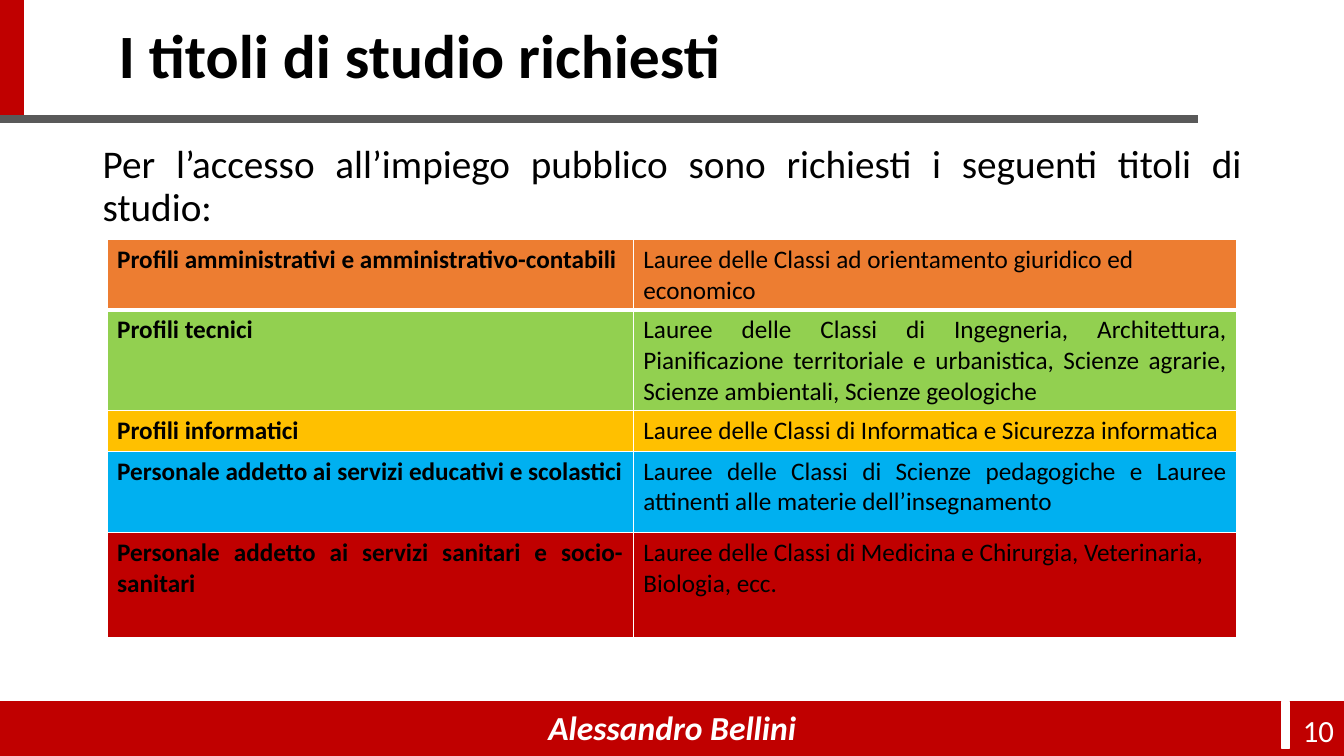
from lxml import etree
from pptx import Presentation
from pptx.dml.color import RGBColor
from pptx.enum.shapes import MSO_CONNECTOR, MSO_SHAPE
from pptx.enum.text import MSO_ANCHOR, PP_ALIGN
from pptx.oxml.ns import qn
from pptx.util import Cm, Pt

LEFT, CENTER, RIGHT = PP_ALIGN.LEFT, PP_ALIGN.CENTER, PP_ALIGN.RIGHT
JUSTIFY = PP_ALIGN.JUSTIFY
TOP, MIDDLE = MSO_ANCHOR.TOP, MSO_ANCHOR.MIDDLE
RECT, STRAIGHT = MSO_SHAPE.RECTANGLE, MSO_CONNECTOR.STRAIGHT

RED, GREY, WHITE, BLACK = "C00000", "595959", "FFFFFF", "000000"
WIDTH, HEIGHT = 33.87, 19.05


def color(value):
    return RGBColor.from_string(value)


class SlideBuilder:
    font = "Calibri"

    def __init__(self, slide):
        self.s = slide

    def rect(self, x, y, w, h, fill):
        sp = self.s.shapes.add_shape(RECT, Cm(x), Cm(y), Cm(w), Cm(h))
        sp.shadow.inherit = False
        sp.fill.solid()
        sp.fill.fore_color.rgb = color(fill)
        sp.line.color.rgb = color(fill)
        sp.line.width = Pt(1)

    def line(self, x1, y1, x2, y2, stroke, width):
        c = self.s.shapes.add_connector(STRAIGHT, Cm(x1), Cm(y1), Cm(x2), Cm(y2))
        c.line.color.rgb = color(stroke)
        c.line.width = Pt(width)
        etree.SubElement(c._element.spPr, qn("a:effectLst"))

    def set_text(self, tf, text, size, fill=BLACK, align=LEFT, bold=False,
                 italic=False, spacing=None):
        tf.text = text
        p = tf.paragraphs[0]
        p.alignment = align
        if spacing:
            p.line_spacing = spacing
        f = p.runs[0].font
        f.name, f.size, f.bold, f.italic = self.font, Pt(size), bold, italic
        f.color.rgb = color(fill)

    def text(self, x, y, w, h, text, size, anchor=MIDDLE, **style):
        tf = self.s.shapes.add_textbox(Cm(x), Cm(y), Cm(w), Cm(h)).text_frame
        tf.word_wrap = True
        tf.vertical_anchor = anchor
        self.set_text(tf, text, size, **style)

    def border(self, cell, side, width):
        ln = etree.SubElement(cell._tc.get_or_add_tcPr(), qn("a:" + side),
                              w=str(Pt(width)))
        fill = etree.SubElement(ln, qn("a:solidFill"))
        etree.SubElement(fill, qn("a:srgbClr"), val=WHITE)

    def table(self, x, y, widths, rows, size):
        heights = [row[0] for row in rows]
        table = self.s.shapes.add_table(
            len(rows), len(widths), Cm(x), Cm(y),
            Cm(sum(widths)), Cm(sum(heights))).table
        for column, width in zip(table.columns, widths):
            column.width = Cm(width)
        for i, (height, fill, *texts) in enumerate(rows):
            table.rows[i].height = Cm(height)
            for j, (text, align) in enumerate(texts):
                cell = table.cell(i, j)
                self.set_text(cell.text_frame, text, size, align=align,
                              bold=j == 0)
                # Thicker rule below the first row
                for side in ("lnL", "lnR", "lnT", "lnB"):
                    thick = (i, side) in ((0, "lnB"), (1, "lnT"))
                    self.border(cell, side, 3 if thick else 1)
                cell.fill.solid()
                cell.fill.fore_color.rgb = color(fill)


PROFILES = [
    (1.7, "ED7D31",
     ("Profili amministrativi e amministrativo-contabili", LEFT),
     ("Lauree delle Classi ad orientamento giuridico ed economico", LEFT)),
    (2.41, "92D050",
     ("Profili tecnici", LEFT),
     ("Lauree delle Classi di Ingegneria, Architettura, Pianificazione "
      "territoriale e urbanistica, Scienze agrarie, Scienze ambientali, "
      "Scienze geologiche", JUSTIFY)),
    (0.97, "FFC000",
     ("Profili informatici", LEFT),
     ("Lauree delle Classi di Informatica e Sicurezza informatica", LEFT)),
    (2.06, "00B0F0",
     ("Personale addetto ai servizi educativi e scolastici", LEFT),
     ("Lauree delle Classi di Scienze pedagogiche e Lauree attinenti alle "
      "materie dell’insegnamento", JUSTIFY)),
    (2.64, RED,
     ("Personale addetto ai servizi sanitari e socio-sanitari", JUSTIFY),
     ("Lauree delle Classi di Medicina e Chirurgia, Veterinaria, Biologia, ecc.",
      LEFT)),
]


def main():
    prs = Presentation()
    prs.slide_width, prs.slide_height = Cm(WIDTH), Cm(HEIGHT)
    b = SlideBuilder(prs.slides.add_slide(prs.slide_layouts[6]))

    # Footer band and header rules
    b.rect(0, 17.68, WIDTH, 1.37, RED)
    b.rect(32.31, 17.68, 0.18, 1.19, WHITE)
    b.line(0.3, 0, 0.3, 3, RED, 17.25)
    b.line(0, 3, 30.2, 3, GREY, 5.5)

    # Title and introduction
    b.text(2.74, 0, 28.8, 2.97, "I titoli di studio richiesti", 44,
           bold=True, spacing=0.9)
    b.text(2.34, 3.53, 29.21, 12.9,
           "Per l’accesso all’impiego pubblico sono richiesti i seguenti "
           "titoli di studio:", 28, anchor=TOP, align=JUSTIFY, spacing=0.9)

    # Footer text
    b.text(11.23, 17.81, 11.43, 1.02, "Alessandro Bellini", 24, fill=WHITE,
           align=CENTER, bold=True, italic=True)
    b.text(26.25, 17.88, 7.62, 1.02, "10", 22, fill=WHITE, align=RIGHT)

    # Degrees required for each profile
    b.table(2.7, 6.03, (13.26, 15.21), PROFILES, 18)

    prs.save("out.pptx")


if __name__ == "__main__":
    main()
